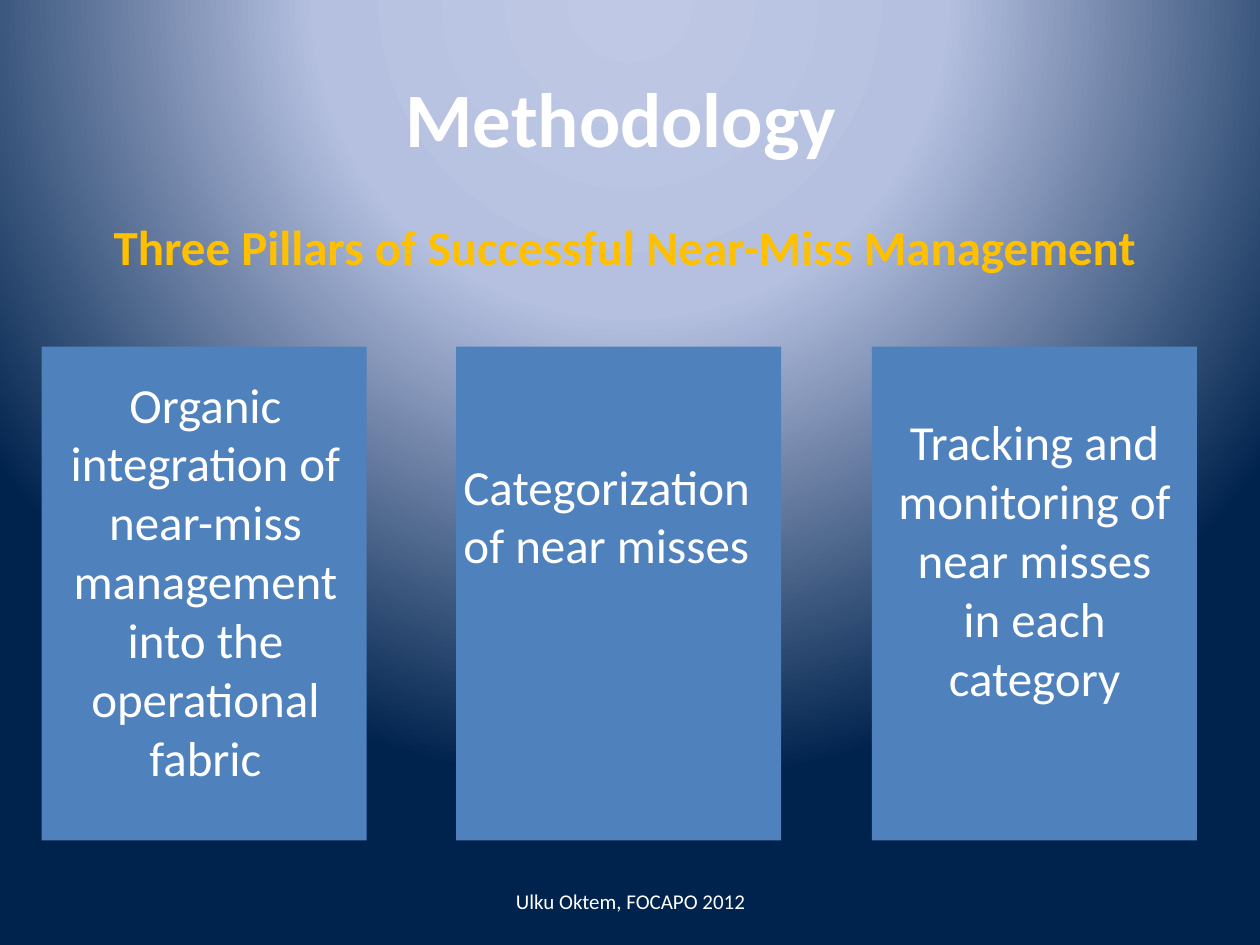
from lxml import etree
from pptx import Presentation
from pptx import util as u
from pptx.dml import color
from pptx.enum import shapes, text
from pptx.oxml import ns

WHITE = "FFFFFF"
GOLD = "FFC000"
PILLAR_BLUE = "4F81BD"
BACKGROUND_STOPS = [(0, "BFC9E5"), (40, "B5C0E0"), (100, "00234D")]
GLOW_CENTRE = {"l": 50, "t": -80, "r": 50, "b": 180}
PILLAR_LEFTS = [0.33, 3.62, 6.92]
LINE = 0.47
CENTER = text.PP_ALIGN.CENTER
LEFT = text.PP_ALIGN.LEFT
TOP = text.MSO_ANCHOR.TOP
MIDDLE = text.MSO_ANCHOR.MIDDLE


def rgb(value):
    return color.RGBColor.from_string(value)


def add_node(parent, tag, **attributes):
    node = etree.SubElement(parent, ns.qn(tag))
    for name, value in attributes.items():
        node.set(name, str(value))
    return node


def paint_background(page):
    page.background.fill.gradient()
    gradient = page.element.find(".//" + ns.qn("a:gradFill"))
    for child in list(gradient):
        gradient.remove(child)
    stops = add_node(gradient, "a:gsLst")
    for percent, value in BACKGROUND_STOPS:
        stop = add_node(stops, "a:gs", pos=percent * 1000)
        add_node(stop, "a:srgbClr", val=value)
    glow = add_node(gradient, "a:path", path="circle")
    edges = {side: percent * 1000 for side, percent in GLOW_CENTRE.items()}
    add_node(glow, "a:fillToRect", **edges)


def add_pillar(page, left):
    pillar = page.shapes.add_shape(
        shapes.MSO_SHAPE.RECTANGLE,
        u.Inches(left), u.Inches(2.75), u.Inches(2.58), u.Inches(3.92))
    pillar.shadow.inherit = False
    pillar.fill.solid()
    pillar.fill.fore_color.rgb = rgb(PILLAR_BLUE)
    pillar.line.fill.background()


def add_text(page, bounds, words, size=28, fill=WHITE, bold=False,
             align=CENTER, anchor=TOP, lines_down=0):
    box = page.shapes.add_textbox(*[u.Inches(length) for length in bounds])
    frame = box.text_frame
    frame.word_wrap = True
    frame.vertical_anchor = anchor
    frame.margin_top = u.Inches(0.05 + lines_down * LINE)
    para = frame.paragraphs[0]
    para.alignment = align
    span = para.add_run()
    span.text = words
    span.font.name = "Calibri"
    span.font.size = u.Pt(size)
    span.font.bold = bold
    span.font.color.rgb = rgb(fill)


def main():
    deck = Presentation()
    deck.slide_width = u.Inches(10)
    deck.slide_height = u.Inches(7.5)
    page = deck.slides.add_slide(deck.slide_layouts[6])
    paint_background(page)
    add_text(page, (0.5, 0.3, 9, 1.25), "Methodology ",
             size=44, bold=True, anchor=MIDDLE)
    add_text(page, (3.42, 6.95, 3.17, 0.4), "Ulku Oktem, FOCAPO 2012",
             size=12, anchor=MIDDLE)
    add_text(page, (0.54, 1.67, 8.92, 0.57),
             "Three Pillars of Successful Near-Miss Management ",
             fill=GOLD, bold=True)
    for left in PILLAR_LEFTS:
        add_pillar(page, left)
    add_text(page, (0.42, 2.92, 2.42, 3.4),
             "Organic integration of near-miss management "
             "into the operational fabric")
    add_text(page, (3.58, 3.1, 2.58, 1.99), "Categorization of near misses",
             align=LEFT, lines_down=1)
    add_text(page, (7, 2.75, 2.42, 2.93),
             "Tracking and monitoring of near misses in each category",
             lines_down=1)
    deck.save("out.pptx")


if __name__ == "__main__":
    main()
